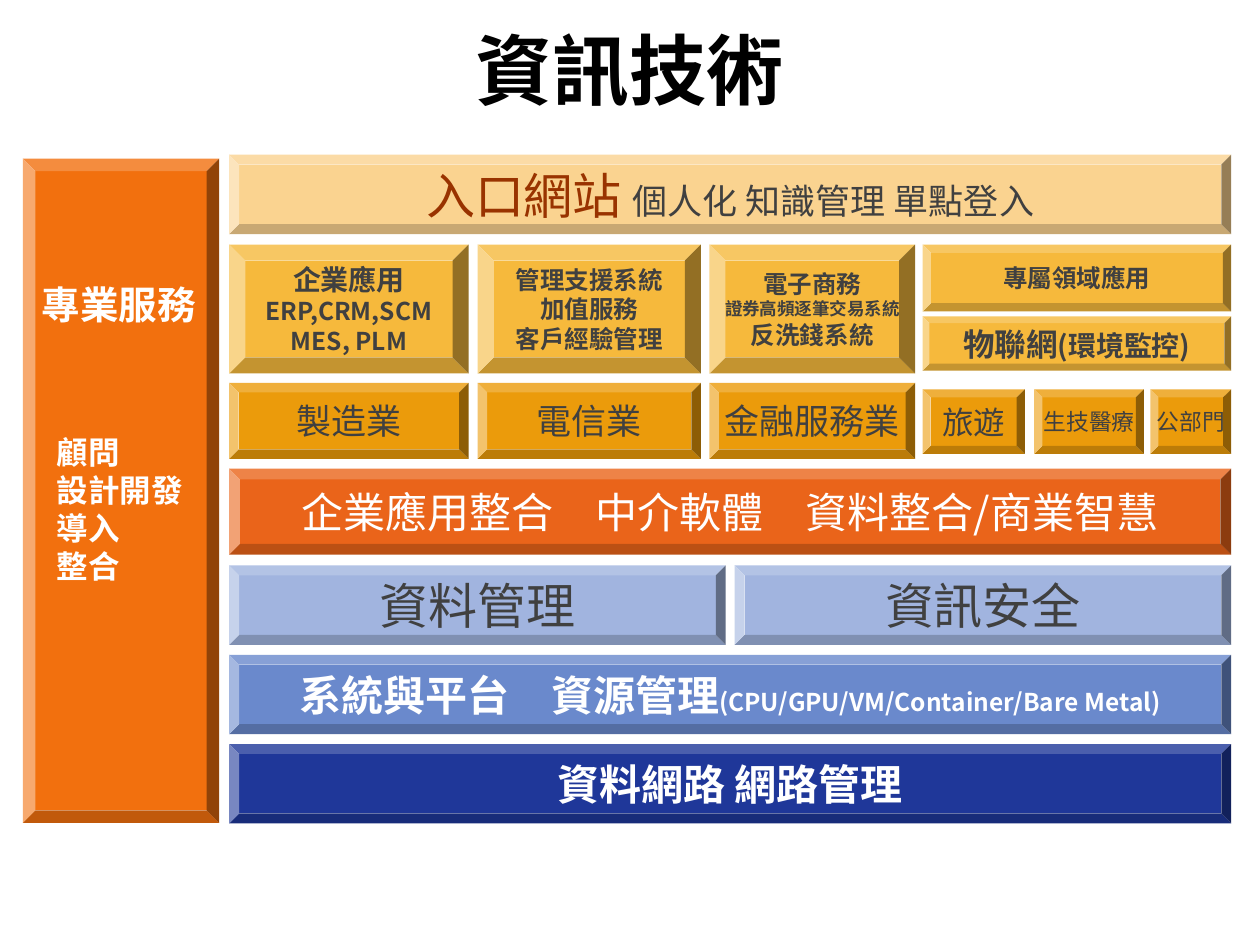
from lxml import etree
from pptx import Presentation
from pptx.dml.color import RGBColor
from pptx.enum import shapes, text
from pptx.oxml import ns
from pptx.util import Cm, Pt

BLACK = RGBColor(0x00, 0x00, 0x00)
WHITE = RGBColor(0xFF, 0xFF, 0xFF)
GRAY = RGBColor(0x40, 0x40, 0x40)
RUST = RGBColor(0x99, 0x33, 0x00)
CREAM = RGBColor(0xFA, 0xD3, 0x90)
AMBER = RGBColor(0xF6, 0xB9, 0x3C)
GOLD = RGBColor(0xEB, 0x9B, 0x0B)
ORANGE = RGBColor(0xEA, 0x64, 0x1A)
SERVICE = RGBColor(0xF2, 0x70, 0x0E)
PALE = RGBColor(0xA1, 0xB4, 0xDF)
BLUE = RGBColor(0x6A, 0x89, 0xCC)
NAVY = RGBColor(0x1F, 0x37, 0x99)
SANS = "Noto Sans CJK SC"
CENTER, LEFT = text.PP_ALIGN.CENTER, text.PP_ALIGN.LEFT


def write(tf, lines, color, bold, align=CENTER, name=SANS):
    for i, runs in enumerate(lines):
        p = tf.paragraphs[0] if i == 0 else tf.add_paragraph()
        p.alignment = align
        f = p.font
        f.size, f.bold, f.name = Pt(runs[0][1]), bold, name
        f.color.rgb = color
        ea = etree.SubElement(p._p.pPr.find(ns.qn("a:defRPr")), ns.qn("a:ea"))
        ea.set("typeface", name)
        for words, size, *tint in runs:
            r = p.add_run()
            r.text = words
            if len(runs) > 1:
                r.font.size = Pt(size)
            if tint:
                r.font.color.rgb = tint[0]


def bevel(s, x, y, w, h, fill, adj=0.125):
    sp = s.shapes.add_shape(shapes.MSO_SHAPE.BEVEL, Cm(x), Cm(y), Cm(w), Cm(h))
    sp.adjustments[0] = adj
    sp.shadow.inherit = False
    sp.fill.solid()
    sp.fill.fore_color.rgb = fill
    sp.line.fill.background()
    sp.text_frame.word_wrap = False
    sp.text_frame.vertical_anchor = text.MSO_ANCHOR.MIDDLE
    return sp.text_frame


prs = Presentation()
prs.slide_width, prs.slide_height = Cm(25.4), Cm(19.05)
s = prs.slides.add_slide(prs.slide_layouts[5])

title = s.shapes.title
title.left, title.top, title.width, title.height = Cm(1.27), Cm(0.43), Cm(22.86), Cm(1.9)
title.text_frame.vertical_anchor = text.MSO_ANCHOR.MIDDLE
write(title.text_frame, [[("資訊技術", 44)]], BLACK, True, name="Vollkorn")

X, W = 4.62, 20.2
HALF = 10.01
bands = [
    (X, 3.12, W, 1.6, CREAM, GRAY, False,
     [("入口網站 ", 28, RUST), ("個人化 知識管理 單點登入", 20)]),
    (X, 9.45, W, 1.73, ORANGE, WHITE, False, [("企業應用整合　中介軟體　資料整合/商業智慧", 24)]),
    (X, 11.4, HALF, 1.6, PALE, GRAY, False, [("資料管理", 28)]),
    (X + W - HALF, 11.4, HALF, 1.6, PALE, GRAY, False, [("資訊安全", 28)]),
    (X, 13.2, W, 1.6, BLUE, WHITE, True,
     [("系統與平台　資源管理", 24), ("(CPU/GPU/VM/Container/Bare Metal)", 14)]),
    (X, 15, W, 1.6, NAVY, WHITE, True, [("資料網路 網路管理", 24)]),
    (18.6, 4.93, 6.22, 1.35, AMBER, GRAY, True, [("專屬領域應用", 14)]),
    (18.6, 6.38, 6.22, 1.09, AMBER, GRAY, True, [("物聯網", 18), ("(環境監控)", 16)]),
    (18.6, 7.85, 2.06, 1.3, GOLD, GRAY, False, [("旅遊", 18)]),
    (20.85, 7.85, 2.21, 1.3, GOLD, GRAY, False, [("生技醫療", 13)]),
    (23.19, 7.85, 1.63, 1.3, GOLD, GRAY, False, [("公部門", 13)]),
]
for x, y, w, h, fill, color, bold, runs in bands:
    write(bevel(s, x, y, w, h, fill), [runs], color, bold)

columns = [
    (X, 4.83, "製造業", [("企業應用", 16), ("ERP,CRM,SCM", 14), ("MES, PLM", 14)]),
    (9.63, 4.5, "電信業", [("管理支援系統", 14), ("加值服務", 14), ("客戶經驗管理", 14)]),
    (14.3, 4.15, "金融服務業", [("電子商務", 14), ("證券高頻逐筆交易系統", 10), ("反洗錢系統", 14)]),
]
for x, w, industry, systems in columns:
    write(bevel(s, x, 4.93, w, 2.6, AMBER), [[line] for line in systems], GRAY, True)
    write(bevel(s, x, 7.72, w, 1.53, GOLD), [[(industry, 20)]], GRAY, False)

bevel(s, 0.46, 3.2, 3.96, 13.39, SERVICE, 0.064)
labels = [
    (0.3, 5.54, 1.19, 22, CENTER, ["專業服務"]),
    (0.89, 8.61, 3.33, 18, LEFT, ["顧問", "設計開發", "導入", "整合"]),
]
for x, y, h, size, align, lines in labels:
    tf = s.shapes.add_textbox(Cm(x), Cm(y), Cm(4.19), Cm(h)).text_frame
    tf.word_wrap = True
    write(tf, [[(line, size)] for line in lines], WHITE, True, align)

prs.save("out.pptx")
